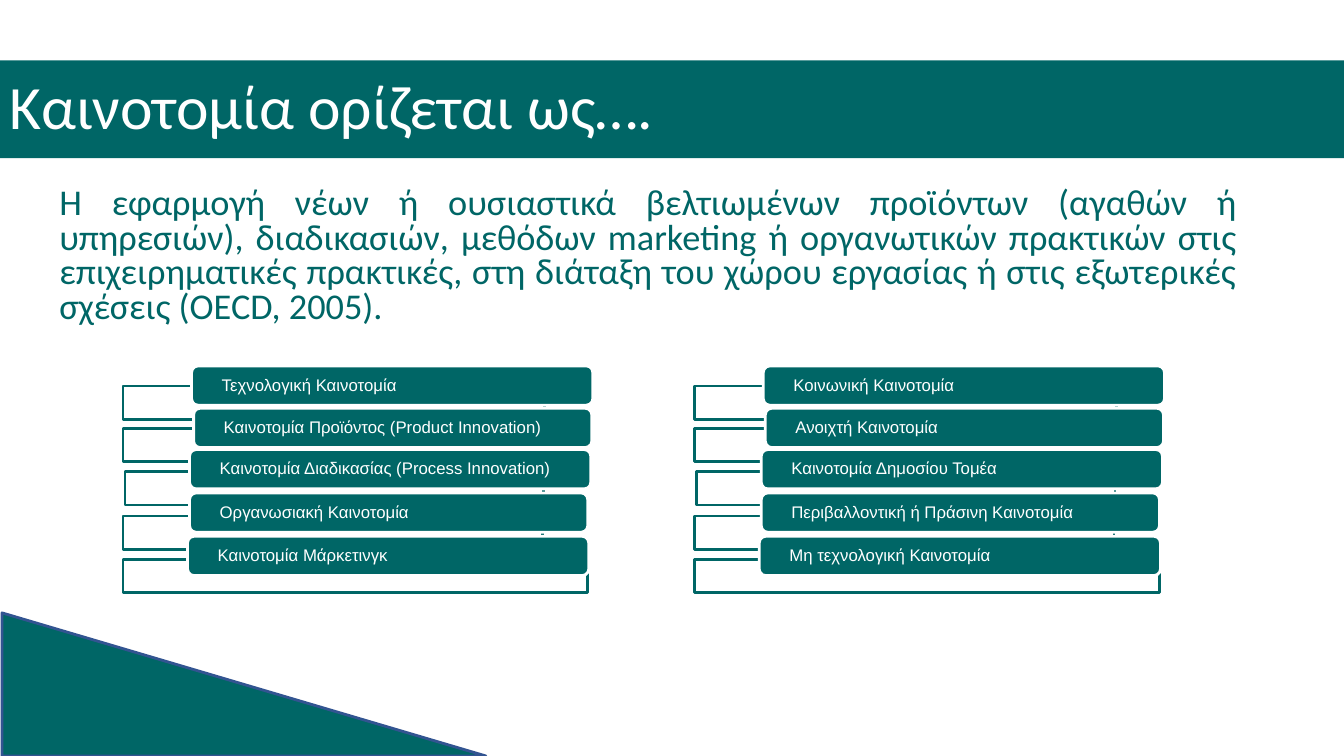
from dataclasses import dataclass

from pptx import Presentation
from pptx.dml.color import RGBColor
from pptx.enum.shapes import MSO_SHAPE
from pptx.enum.text import MSO_ANCHOR, PP_ALIGN
from pptx.shapes.autoshape import Shape
from pptx.slide import Slide
from pptx.text.text import TextFrame
from pptx.util import Inches, Pt

RECT = MSO_SHAPE.RECTANGLE
ROUND_RECT = MSO_SHAPE.ROUNDED_RECTANGLE
RIGHT_TRIANGLE = MSO_SHAPE.RIGHT_TRIANGLE
TOP, MIDDLE = MSO_ANCHOR.TOP, MSO_ANCHOR.MIDDLE
LEFT, JUSTIFY = PP_ALIGN.LEFT, PP_ALIGN.JUSTIFY


@dataclass(frozen=True)
class Theme:
    teal: RGBColor = RGBColor(0x00, 0x66, 0x66)
    white: RGBColor = RGBColor(0xFF, 0xFF, 0xFF)
    blue: RGBColor = RGBColor(0x32, 0x54, 0x91)
    heading_font: str = "Calibri"
    label_font: str = "Arial"
    title_size: float = 44
    body_size: float = 25.9
    label_size: float = 12
    line_width: float = 2


@dataclass(frozen=True)
class Box:
    left: float
    top: float
    width: float
    height: float


@dataclass(frozen=True)
class TextStyle:
    font: str
    size: float
    color: RGBColor
    line_spacing: float = 0.9
    align: PP_ALIGN = LEFT
    anchor: MSO_ANCHOR = MIDDLE
    margin_x: float = 0.1
    margin_y: float = 0.05


@dataclass(frozen=True)
class Row:
    """Frame and label geometry of one list row; lefts are offsets from the list's left."""
    frame_left: float
    frame_top: float
    frame_width: float
    label_left: float
    label_top: float
    label_width: float


@dataclass(frozen=True)
class InnovationList:
    left: float
    labels: tuple[str, ...]


THEME = Theme()
TITLE_STYLE = TextStyle(THEME.heading_font, THEME.title_size, THEME.white)
BODY_STYLE = TextStyle(THEME.heading_font, THEME.body_size, THEME.teal,
                       line_spacing=0.8, align=JUSTIFY, anchor=TOP)
LABEL_STYLE = TextStyle(THEME.label_font, THEME.label_size, THEME.white,
                        margin_x=0.28, margin_y=0)

FRAME_HEIGHT = 0.33
LABEL_HEIGHT = 0.39
ROWS = (
    Row(0, 3.83, 4.18, 0.68, 3.63, 3.98),
    Row(0, 4.25, 4.18, 0.70, 4.05, 3.95),
    Row(0.02, 4.68, 4.15, 0.66, 4.46, 3.98),
    Row(0, 5.12, 4.16, 0.66, 4.89, 3.95),
    Row(0, 5.55, 4.61, 0.64, 5.32, 3.98),
)
LISTS = (
    InnovationList(1.22, (
        "Τεχνολογική Καινοτομία",
        "Καινοτομία Προϊόντος (Product Innovation)",
        "Καινοτομία Διαδικασίας (Process Innovation)",
        "Οργανωσιακή Καινοτομία",
        "Καινοτομία Μάρκετινγκ",
    )),
    InnovationList(6.89, (
        "Κοινωνική Καινοτομία",
        "Ανοιχτή Καινοτομία",
        "Καινοτομία Δημοσίου Τομέα",
        "Περιβαλλοντική ή Πράσινη Καινοτομία",
        "Μη τεχνολογική Καινοτομία",
    )),
)
TITLE = "Καινοτομία ορίζεται ως…."
DEFINITION = (
    "Η εφαρμογή νέων ή ουσιαστικά βελτιωμένων προϊόντων (αγαθών ή υπηρεσιών), "
    "διαδικασιών, μεθόδων marketing ή οργανωτικών πρακτικών στις επιχειρηματικές "
    "πρακτικές, στη διάταξη του χώρου εργασίας ή στις εξωτερικές σχέσεις (OECD, 2005)."
)


def add_box(s: Slide, kind: MSO_SHAPE, box: Box, fill: RGBColor | None = None,
            line: RGBColor | None = None) -> Shape:
    sp = s.shapes.add_shape(kind, Inches(box.left), Inches(box.top),
                            Inches(box.width), Inches(box.height))
    sp.shadow.inherit = False
    if fill is None:
        sp.fill.background()
    else:
        sp.fill.solid()
        sp.fill.fore_color.rgb = fill
    if line is None:
        sp.line.fill.background()
    else:
        sp.line.color.rgb = line
        sp.line.width = Pt(THEME.line_width)
    return sp


def write_text(tf: TextFrame, text: str, style: TextStyle) -> None:
    tf.word_wrap = True
    tf.vertical_anchor = style.anchor
    tf.margin_left = tf.margin_right = Inches(style.margin_x)
    tf.margin_top = tf.margin_bottom = Inches(style.margin_y)
    p = tf.paragraphs[0]
    p.alignment = style.align
    p.line_spacing = style.line_spacing
    r = p.add_run()
    r.text = text
    r.font.name = style.font
    r.font.size = Pt(style.size)
    r.font.color.rgb = style.color


def add_definition(s: Slide) -> None:
    sp = s.shapes.add_textbox(Inches(0.37), Inches(1.81), Inches(12), Inches(1.65))
    write_text(sp.text_frame, DEFINITION, BODY_STYLE)
    p = sp.text_frame.paragraphs[0]
    p.space_before = Pt(10)
    pPr = p._p.get_or_add_pPr()
    pPr.set("marL", str(Inches(0.12)))
    pPr.set("indent", "0")


def add_innovation_list(s: Slide, group: InnovationList) -> None:
    for row, text in zip(ROWS, group.labels):
        frame = Box(group.left + row.frame_left, row.frame_top, row.frame_width, FRAME_HEIGHT)
        label = Box(group.left + row.label_left, row.label_top, row.label_width, LABEL_HEIGHT)
        add_box(s, RECT, frame, line=THEME.teal)
        sp = add_box(s, ROUND_RECT, label, THEME.teal, THEME.white)
        write_text(sp.text_frame, text, LABEL_STYLE)


def main() -> None:
    prs = Presentation()
    prs.slide_width, prs.slide_height = Inches(13.33), Inches(7.5)
    s = prs.slides.add_slide(prs.slide_layouts[6])
    add_box(s, RIGHT_TRIANGLE, Box(0.02, 6.08, 4.8, 1.42), THEME.teal, THEME.blue)
    title_bar = add_box(s, RECT, Box(0, 0.6, 13.33, 0.97), THEME.teal)
    write_text(title_bar.text_frame, TITLE, TITLE_STYLE)
    add_definition(s)
    for group in LISTS:
        add_innovation_list(s, group)
    prs.save("out.pptx")


if __name__ == "__main__":
    main()
